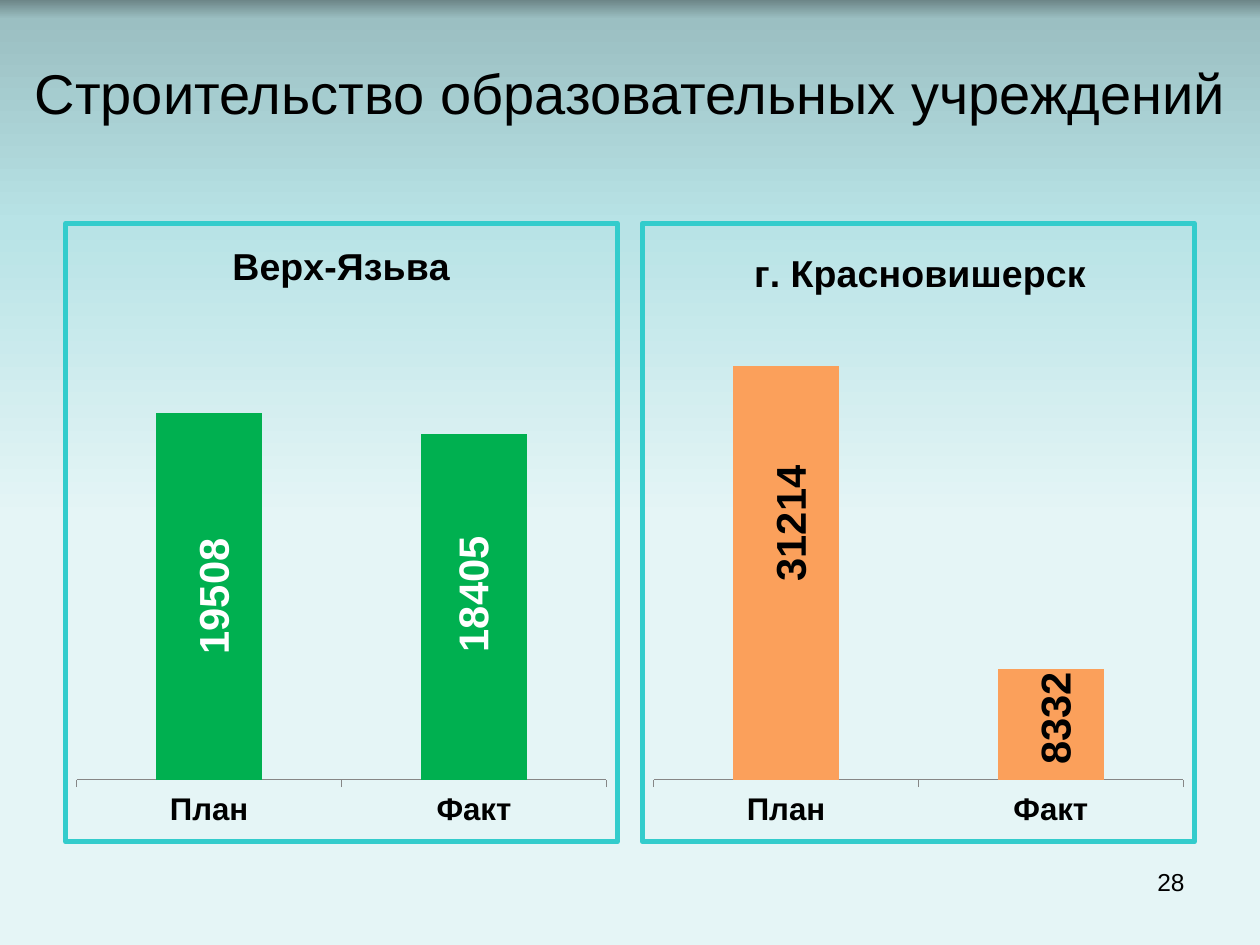
from lxml.etree import SubElement
from pptx import Presentation
from pptx.chart.data import CategoryChartData
from pptx.dml.color import RGBColor
from pptx.enum.chart import XL_CHART_TYPE, XL_LABEL_POSITION, XL_TICK_MARK
from pptx.enum.text import MSO_ANCHOR, MSO_AUTO_SIZE, PP_ALIGN
from pptx.oxml import parse_xml
from pptx.oxml.ns import nsdecls, qn
from pptx.util import Cm, Pt

THEME = {
    "font": "Arial",
    "text": "000000",
    "label_light": "FFFFFF",
    "border": "33CCCC",
    "axis": "868686",
    "green": "00B050",
    "orange": "FBA05B",
    "background": [(0, "6D8688"), (2, "9BBFC2"), (24, "B8E3E6"), (55, "E5F5F6")],
    "title_size": 32,
    "chart_title_size": 21.6,
    "chart_size": 18,
    "label_size": 24,
    "number_size": 14,
}
NO_LEADER_LINES = (
    f"<c:extLst {nsdecls('c')}><c:ext uri='{{CE6537A1-D6FC-4f65-9D91-7224C49458BB}}' "
    "xmlns:c15='http://schemas.microsoft.com/office/drawing/2012/chart'>"
    "<c15:showLeaderLines val='0'/></c:ext></c:extLst>")


def format_font(font, size, color=THEME["text"], bold=False):
    values = {"name": THEME["font"], "size": Pt(size), "bold": bold}
    for name, value in values.items():
        setattr(font, name, value)
    font.color.rgb = RGBColor.from_string(color)


def manual_layout(**values):
    """Return a c:layout element; x, y, w and h are fractions of the chart."""
    layout = parse_xml(f"<c:layout {nsdecls('c')}><c:manualLayout/></c:layout>")
    for name, value in values.items():
        SubElement(layout[0], qn(f"c:{name}")).set("val", str(value))
    return layout


presentation = Presentation()
presentation.slide_width, presentation.slide_height = Cm(25.4), Cm(19.05)
slide = presentation.slides.add_slide(presentation.slide_layouts[5])

# Background gradient
background_fill = slide.background.fill
background_fill.gradient()
background_fill.gradient_angle = 270
stop_list = next(slide.element.iter(qn("a:gsLst")))
for stop in list(stop_list):
    stop_list.remove(stop)
for percent, color in THEME["background"]:
    stop = SubElement(stop_list, qn("a:gs"), pos=str(percent * 1000))
    SubElement(stop, qn("a:srgbClr"), val=color)

# Title
title = slide.shapes.title
title_box = {"left": Cm(0.43), "top": Cm(0.76), "width": Cm(24.56), "height": Cm(2.21)}
for name, value in title_box.items():
    setattr(title, name, value)
title_frame = title.text_frame
title_format = {"auto_size": MSO_AUTO_SIZE.NONE, "vertical_anchor": MSO_ANCHOR.MIDDLE,
                "margin_left": 0, "margin_right": 0, "word_wrap": True}
for name, value in title_format.items():
    setattr(title_frame, name, value)
title_frame.text = "Строительство образовательных учреждений"
title_frame.paragraphs[0].alignment = PP_ALIGN.CENTER
format_font(title_frame.paragraphs[0].runs[0].font, THEME["title_size"])

# Charts: label shifts are fractions of the chart, measured from the bar centre
charts = [
    {"title": "Верх-Язьва", "values": (19508, 18405), "maximum": 25000,
     "bar": THEME["green"], "label": THEME["label_light"],
     "title_at": (0.29, 0.02), "plot_top": 0.14, "plot_height": 0.76,
     "shifts": [(0.01, 0), (0, -0.02)]},
    {"title": "г. Красновишерск", "values": (31214, 8332), "maximum": 35000,
     "bar": THEME["orange"], "label": THEME["text"],
     "title_at": (0.19, 0.03), "plot_top": 0.15, "plot_height": 0.75,
     "shifts": [(0.01, -0.08), (0.01, -0.01)]},
]
chart_width, chart_step = 11.23, 11.63
for index, item in enumerate(charts):
    data = CategoryChartData()
    data.categories = ["План", "Факт"]
    data.add_series("Series 1", item["values"])
    chart = slide.shapes.add_chart(
        XL_CHART_TYPE.COLUMN_CLUSTERED, Cm(1.27 + index * chart_step), Cm(4.45),
        Cm(chart_width), Cm(12.57), data).chart
    chart.has_legend = False
    format_font(chart.font, THEME["chart_size"])

    chart.has_title = True
    chart_title = chart.chart_title
    chart_title.text_frame.text = item["title"]
    format_font(chart_title.text_frame.paragraphs[0].runs[0].font,
                THEME["chart_title_size"], bold=True)
    title_element = chart_title._element
    for layout in title_element.findall(qn("c:layout")):
        title_element.remove(layout)
    left, top = item["title_at"]
    title_element.find(qn("c:tx")).addnext(
        manual_layout(xMode="edge", yMode="edge", x=left, y=top))

    value_axis, category_axis = chart.value_axis, chart.category_axis
    axis_format = {"minimum_scale": 0, "maximum_scale": item["maximum"],
                   "has_major_gridlines": False, "visible": False}
    for name, value in axis_format.items():
        setattr(value_axis, name, value)
    category_axis.major_tick_mark = XL_TICK_MARK.OUTSIDE
    category_axis.format.line.color.rgb = RGBColor.from_string(THEME["axis"])
    category_axis.format.line.width = Pt(0.75)
    format_font(category_axis.tick_labels.font, THEME["chart_size"], bold=True)

    plot = chart.plots[0]
    plot.gap_width = 150
    plot.vary_by_categories = False
    series = plot.series[0]
    series.format.fill.solid()
    series.format.fill.fore_color.rgb = RGBColor.from_string(item["bar"])
    for point_index in range(len(item["values"])):
        label = series.points[point_index].data_label
        format_font(label.font, THEME["label_size"], item["label"], bold=True)
        label.position = XL_LABEL_POSITION.CENTER

    chart_space = chart.element
    for element, (x, y) in zip(chart_space.iter(qn("c:dLbl")), item["shifts"]):
        element.find(qn("c:idx")).addnext(manual_layout(x=x, y=y))
        body = next(element.iter(qn("a:bodyPr")))
        body.set("rot", "-5400000")
        body.set("vert", "horz")
    series_labels = next(chart_space.iter(qn("c:dLbls")))
    for leader_lines in series_labels.findall(qn("c:showLeaderLines")):
        leader_lines.set("val", "0")
    series_labels.append(parse_xml(NO_LEADER_LINES))

    plot_area = next(chart_space.iter(qn("c:plotArea")))
    for layout in plot_area.findall(qn("c:layout")):
        plot_area.remove(layout)
    plot_area.insert(0, manual_layout(
        layoutTarget="inner", xMode="edge", yMode="edge", x=0.02,
        y=item["plot_top"], w=0.96, h=item["plot_height"]))
    chart_space.find(qn("c:chart")).addnext(parse_xml(
        f"<c:spPr {nsdecls('c', 'a')}><a:noFill/><a:ln w='{Pt(3)}'><a:solidFill>"
        f"<a:srgbClr val='{THEME['border']}'/></a:solidFill></a:ln></c:spPr>"))

# Slide number
number_frame = slide.shapes.add_textbox(Cm(18.21), Cm(17.35), Cm(5.92), Cm(1.32)).text_frame
number_frame.word_wrap = True
number_frame.text = "28"
number_frame.paragraphs[0].alignment = PP_ALIGN.RIGHT
format_font(number_frame.paragraphs[0].runs[0].font, THEME["number_size"])

presentation.save("out.pptx")
